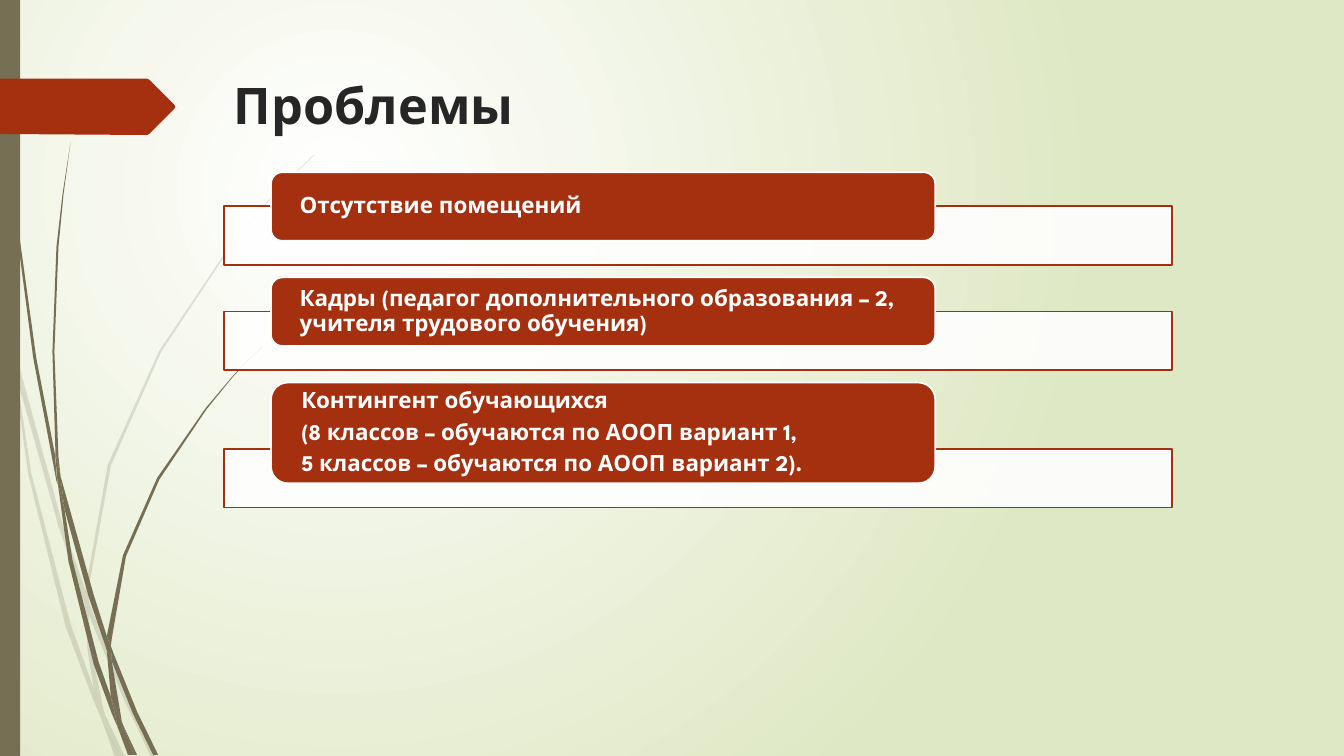
from lxml import etree
from pptx import Presentation
from pptx.dml.color import RGBColor
from pptx.enum.shapes import MSO_SHAPE
from pptx.enum.text import MSO_ANCHOR, MSO_AUTO_SIZE, PP_ALIGN
from pptx.oxml import parse_xml
from pptx.oxml.ns import qn
from pptx.util import Cm, Pt

RECT, ROUND = MSO_SHAPE.RECTANGLE, MSO_SHAPE.ROUNDED_RECTANGLE
TOP, MIDDLE = MSO_ANCHOR.TOP, MSO_ANCHOR.MIDDLE
LEFT, NO_FIT = PP_ALIGN.LEFT, MSO_AUTO_SIZE.NONE
FONT = "League Spartan"
RED, OLIVE, WHITE, DARK, PALE = "A53010", "766F54", "FFFFFF", "262626", "DFE8C4"

TITLE = "Проблемы"
# bar height in cm, paragraphs
PROBLEMS = [
    (1.73, ["Отсутствие помещений"]),
    (1.73, ["Кадры (педагог дополнительного образования – 2, учителя трудового обучения)"]),
    (2.54, ["Контингент обучающихся",
            "(8 классов – обучаются по АООП вариант 1,",
            "5 классов – обучаются по АООП вариант 2)."]),
]

# Outlines of the grass blades and the pointer, in hundredths of an inch
UNIT = Cm(2.54) / 100
FAINT_BLADES = [
    [(11, 350), (9, 322), (0, 282), (0, 299), (10, 344)],
    [(58, 522), (84, 599), (85, 586), (62, 520), (14, 345), (17, 376)],
    [(92, 607), (88, 596), (88, 610), (123, 694), (150, 751), (155, 751), (127, 692)],
    [(119, 751), (124, 751), (105, 711)],
    [(93, 683), (70, 619), (31, 469), (17, 376), (11, 350), (28, 470), (65, 621),
     (92, 693), (101, 714), (99, 707)],
    [(84, 599), (87, 646), (93, 683), (96, 692), (105, 711), (103, 706), (91, 646),
     (88, 610), (88, 608)],
    [(88, 584), (110, 462), (160, 349), (229, 245), (268, 198), (290, 175), (312, 154),
     (312, 153), (289, 175), (268, 197), (228, 244), (158, 348), (107, 461), (85, 584),
     (85, 586), (88, 596)],
    [(101, 714), (114, 751), (119, 751)],
    [(88, 608), (88, 610), (88, 596), (85, 586), (84, 599)],
    [(96, 692), (93, 683), (99, 707), (101, 714), (119, 751), (105, 711)],
]
SOLID_BLADES = [
    [(7, 110), (17, 233), (33, 355), (56, 477), (57, 481), (55, 457), (55, 453),
     (36, 355), (19, 232), (8, 109), (5, 48), (4, 0), (3, 0), (4, 48)],
    [(88, 592), (106, 645), (106, 633), (106, 631), (93, 590), (60, 472), (64, 505)],
    [(113, 649), (110, 641), (111, 656), (132, 708), (152, 749), (157, 749), (136, 706)],
    [(110, 691), (98, 657), (72, 556), (64, 505), (57, 477), (68, 557), (93, 659),
     (111, 708), (117, 722), (116, 717)],
    [(60, 472), (58, 453), (54, 349), (58, 245), (63, 193), (70, 141), (62, 193),
     (56, 245), (52, 349), (55, 449)],
    [(133, 749), (136, 749), (122, 719)],
    [(57, 477), (64, 505), (60, 472), (55, 449), (55, 453)],
    [(111, 633), (125, 552), (158, 476), (205, 406), (231, 374), (245, 359), (261, 344),
     (260, 344), (245, 358), (231, 373), (204, 405), (156, 474), (122, 551), (106, 631),
     (110, 641)],
    [(117, 722), (127, 749), (131, 749)],
    [(106, 645), (110, 691), (116, 706), (122, 719), (121, 716), (111, 656), (109, 651)],
    [(106, 645), (109, 651), (111, 656), (110, 641), (106, 631), (106, 633)],
    [(116, 706), (110, 691), (116, 717), (117, 722), (130, 749), (133, 749), (122, 719)],
]
POINTER = [(0, 78), (146, 78), (148, 79), (173, 104), (174, 106), (173, 108),
           (148, 133), (146, 134), (0, 133)]


def rgb(value):
    return RGBColor.from_string(value)


def paint(shape, fill, line=None, alpha=100):
    """Set flat fill with opacity in percent, and a thin line or none."""
    shape.shadow.inherit = False
    shape.fill.solid()
    shape.fill.fore_color.rgb = rgb(fill)
    if alpha < 100:
        color = shape.element.spPr.find(qn("a:solidFill"))[0]
        etree.SubElement(color, qn("a:alpha"), val=str(alpha * 1000))
    if line:
        shape.line.color.rgb = rgb(line)
        shape.line.width = Pt(1.25)
    else:
        shape.line.fill.background()


def add_outline(points, fill, alpha=100):
    builder = s.shapes.build_freeform(*points[0], scale=UNIT)
    builder.add_line_segments(points[1:])
    paint(builder.convert_to_shape(), fill, alpha=alpha)


def add_box(kind, left, top, width, height, **look):
    shape = s.shapes.add_shape(kind, Cm(left), Cm(top), Cm(width), Cm(height))
    paint(shape, **look)
    return shape


def write(shape, paragraphs, size, color, frame, para):
    tf = shape.text_frame
    tf.text = "\n".join(paragraphs)
    for name, value in frame.items():
        setattr(tf, name, value)
    for p in tf.paragraphs:
        for name, value in para.items():
            setattr(p, name, value)
        for r in p.runs:
            for name, value in dict(name=FONT, size=Pt(size), bold=True).items():
                setattr(r.font, name, value)
            r.font.color.rgb = rgb(color)


prs = Presentation()
prs.slide_width, prs.slide_height = Cm(33.87), Cm(19.05)
s = prs.slides.add_slide(prs.slide_layouts[5])

s.element.cSld.insert(0, parse_xml(f"""
<p:bg xmlns:p="http://schemas.openxmlformats.org/presentationml/2006/main"
      xmlns:a="http://schemas.openxmlformats.org/drawingml/2006/main">
  <p:bgPr><a:gradFill rotWithShape="1">
    <a:gsLst>
      <a:gs pos="0"><a:srgbClr val="{WHITE}"/></a:gs>
      <a:gs pos="100000"><a:srgbClr val="{PALE}"/></a:gs>
    </a:gsLst>
    <a:path path="circle"><a:fillToRect l="50000" t="50000" r="100000" b="100000"/></a:path>
  </a:gradFill><a:effectLst/></p:bgPr>
</p:bg>"""))

for blade in FAINT_BLADES:
    add_outline(blade, OLIVE, alpha=20)
for blade in SOLID_BLADES:
    add_outline(blade, OLIVE)
add_box(RECT, 0, 0, 0.51, 19.05, fill=OLIVE)
add_outline(POINTER, RED)

title = s.shapes.title
title.left, title.top, title.width, title.height = Cm(5.64), Cm(1.73), Cm(24.77), Cm(3.56)
write(title, [TITLE], 36, DARK,
      dict(vertical_anchor=TOP, auto_size=NO_FIT, word_wrap=True), dict(alignment=LEFT))

FRAME_HEIGHT, OVERLAP, GAP = 1.48, 0.87, 0.31
bar_frame = dict(vertical_anchor=MIDDLE, word_wrap=True, margin_left=Cm(0.64),
                 margin_right=Cm(0.64), margin_top=0, margin_bottom=0)
bar_para = dict(alignment=LEFT, line_spacing=0.9, space_after=Pt(5))
top = 4.34
for bar_height, paragraphs in PROBLEMS:
    frame_top = top + bar_height - OVERLAP
    add_box(RECT, 5.64, frame_top, 23.9, FRAME_HEIGHT, fill=WHITE, line=RED, alpha=90)
    bar = add_box(ROUND, 6.83, top, 16.74, bar_height, fill=RED, line=WHITE)
    write(bar, paragraphs, 16, WHITE, bar_frame, bar_para)
    top = frame_top + FRAME_HEIGHT + GAP

prs.save("out.pptx")
